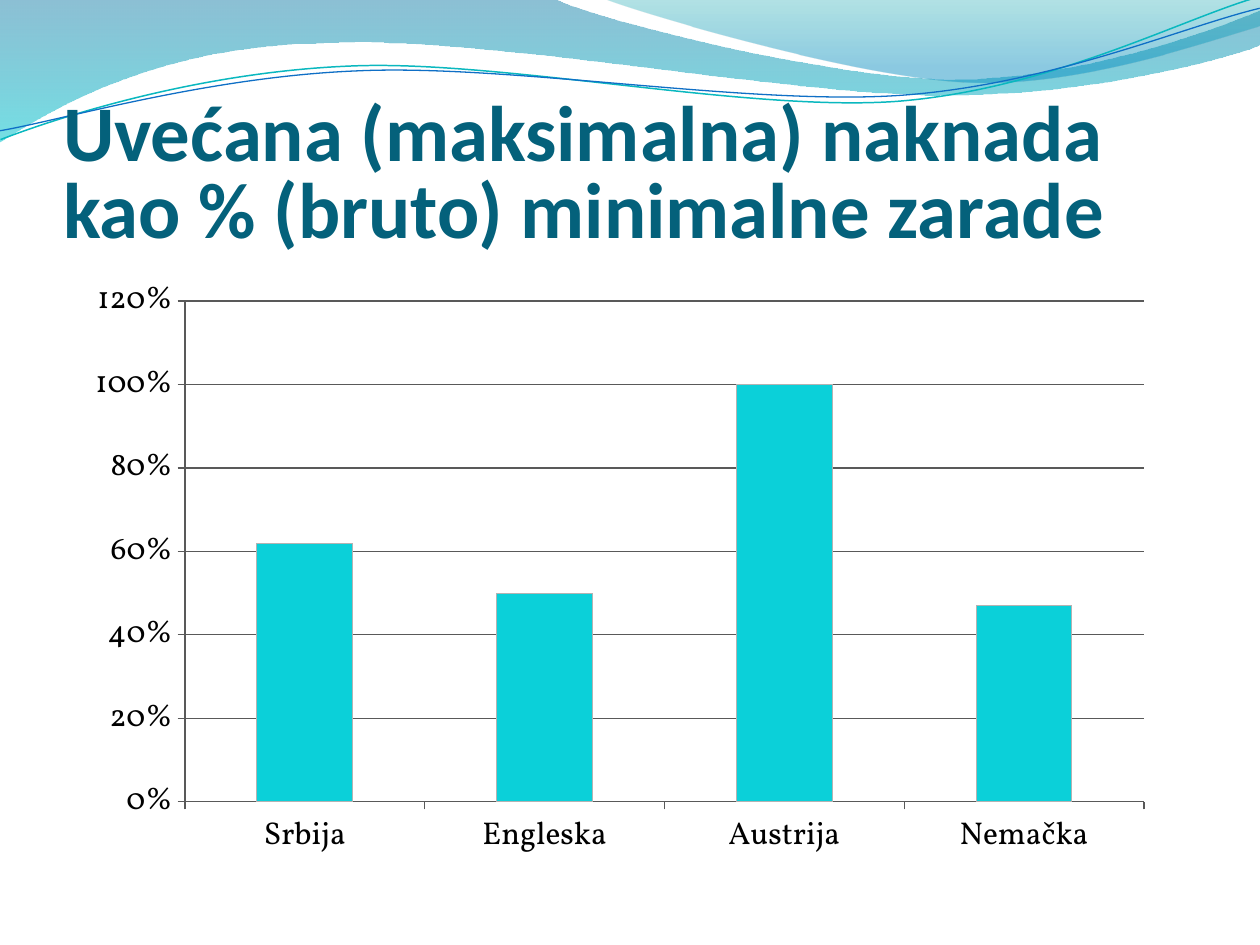
from lxml import etree
from pptx import Presentation
from pptx.chart.data import CategoryChartData
from pptx.dml.color import RGBColor
from pptx.enum.chart import XL_CHART_TYPE, XL_TICK_MARK
from pptx.enum.text import MSO_ANCHOR, MSO_AUTO_SIZE, PP_ALIGN
from pptx.oxml import parse_xml
from pptx.oxml.ns import nsdecls, qn
from pptx.util import Pt

PX = 914400 / 126
SLIDE = (1260, 945)

TITLE = "Uvećana (maksimalna) naknada kao % (bruto) minimalne zarade"
TITLE_BOX = (63, 97, 1134, 157)
SHARES = {"Srbija": 0.62, "Engleska": 0.5, "Austrija": 1, "Nemačka": 0.47}
CHART_BOX = (73, 267, 1092, 605)
PLOT_BOX = (185, 301, 959, 501)

THEME = {
    "title": {"name": "Calibri", "size": Pt(45), "bold": True, "color": "04617B"},
    "chart": {"name": "Vollkorn", "size": Pt(18), "bold": False, "color": "000000"},
    "bar": "0BD0D9",
    "bar_edge": "B3B3B3",
    "axis": "595959",
}

# A two-number step is a line; a six-number step is a Bézier curve.
# Gradient stops are position %, colour, opacity %.
BANDS = [
    ([(0, 0), (554, -1), (600, 21, 837, 79, 955, 79), (1075, 79, 1207, 33, 1260, 11),
      (1261, 45), (1238, 55, 1096, 96, 940, 95), (784, 95, 481, 35, 324, 43),
      (163, 45, 58, 105, -1, 142)],
     [(0, "0074A1", 45), (100, "00C6CF", 55)]),
    ([(604, -1), (641, 14, 859, 78, 969, 82), (1079, 87, 1211, 40, 1260, 26), (1260, 0)],
     [(0, "00A1A9", 30), (80, "008BBF", 45)]),
]
WAVE_TILT = -2.7
WAVES = [
    ([(-2, 110), (58, 90, 199, 52, 350, 53), (499, 53, 745, 118, 896, 114),
      (1049, 109, 1184, 45, 1260, 27)], "0AB8BF", 0.85),
    ([(-2, 101), (57, 94, 207, 57, 357, 58), (509, 58, 750, 112, 901, 108),
      (1052, 104, 1187, 52, 1262, 38)], "0F6FC6", 0.75),
]


def emu(*lengths):
    return [round(n * PX) for n in lengths]


def rgb(value):
    return RGBColor.from_string(value)


def set_font(font, style):
    for name, value in style.items():
        if name == "color":
            font.color.rgb = rgb(value)
        else:
            setattr(font, name, value)


def add_outline(shapes, steps, close):
    """Draw straight segments between the anchors, then bend the curved ones."""
    start, *rest = [emu(*step) for step in steps]
    builder = shapes.build_freeform(*start)
    builder.add_line_segments([step[-2:] for step in rest], close=close)
    s = builder.convert_to_shape()
    segments = s.element.findall(".//" + qn("a:lnTo"))
    for segment, step in zip(segments, rest):
        if len(step) == 6:
            curve = etree.Element(qn("a:cubicBezTo"))
            for x, y in zip(step[::2], step[1::2]):
                etree.SubElement(curve, qn("a:pt"), x=str(x - s.left), y=str(y - s.top))
            segment.getparent().replace(segment, curve)
    s.shadow.inherit = False
    s.fill.background()
    return s


def add_band(shapes, steps, stops):
    s = add_outline(shapes, steps, True)
    s.line.fill.background()
    stops_xml = "".join(
        f'<a:gs pos="{pos * 1000}"><a:srgbClr val="{color}">'
        f'<a:alpha val="{alpha * 1000}"/></a:srgbClr></a:gs>'
        for pos, color, alpha in stops)
    gradient = parse_xml(f'<a:gradFill {nsdecls("a")}><a:gsLst>{stops_xml}</a:gsLst>'
                         '<a:lin ang="5400000" scaled="0"/></a:gradFill>')
    sp_pr = s.element.spPr
    sp_pr.replace(sp_pr.find(qn("a:noFill")), gradient)


def add_wave(shapes, steps, color, width):
    s = add_outline(shapes, steps, False)
    s.rotation = WAVE_TILT
    s.line.color.rgb = rgb(color)
    s.line.width = Pt(width)


def place_plot(chart):
    """Fix the inner plot area inside the chart frame."""
    area = chart.element.find(".//" + qn("c:plotArea"))
    for old in area.findall(qn("c:layout")):
        area.remove(old)
    layout = etree.Element(qn("c:layout"))
    manual = etree.SubElement(layout, qn("c:manualLayout"))
    left, top, width, height = CHART_BOX
    x, y, w, h = PLOT_BOX
    values = {"layoutTarget": "inner", "xMode": "edge", "yMode": "edge",
              "x": (x - left) / width, "y": (y - top) / height,
              "w": w / width, "h": h / height}
    for tag, value in values.items():
        etree.SubElement(manual, qn("c:" + tag)).set("val", str(value))
    area.insert(0, layout)


def add_share_chart(slide):
    data = CategoryChartData(number_format="0%")
    data.categories = list(SHARES)
    data.add_series("Series 1", list(SHARES.values()))
    chart = slide.shapes.add_chart(XL_CHART_TYPE.COLUMN_CLUSTERED, *emu(*CHART_BOX), data).chart
    chart.has_legend = chart.has_title = False
    set_font(chart.font, THEME["chart"])

    plot = chart.plots[0]
    plot.gap_width = 150
    plot.vary_by_categories = False
    bars = plot.series[0].format
    bars.fill.solid()
    bars.fill.fore_color.rgb = rgb(THEME["bar"])
    bars.line.color.rgb = rgb(THEME["bar_edge"])

    values = chart.value_axis
    values.minimum_scale, values.maximum_scale, values.major_unit = 0, 1.2, 0.2
    values.has_major_gridlines = True
    values.tick_labels.number_format = "0%"
    values.tick_labels.number_format_is_linked = False
    for axis in (values, chart.category_axis):
        axis.major_tick_mark = XL_TICK_MARK.OUTSIDE
        axis.minor_tick_mark = XL_TICK_MARK.NONE
    for part in (values, chart.category_axis, values.major_gridlines):
        part.format.line.color.rgb = rgb(THEME["axis"])
        part.format.line.width = Pt(0.75)
    place_plot(chart)


def set_title(slide):
    title = slide.shapes.title
    title.left, title.top, title.width, title.height = emu(*TITLE_BOX)
    tf = title.text_frame
    frame = {"word_wrap": True, "auto_size": MSO_AUTO_SIZE.NONE,
             "vertical_anchor": MSO_ANCHOR.BOTTOM, "margin_left": 0, "margin_right": 0,
             "margin_top": Pt(3.6), "margin_bottom": 0}
    for name, value in frame.items():
        setattr(tf, name, value)
    p = tf.paragraphs[0]
    p.alignment = PP_ALIGN.LEFT
    p.line_spacing = Pt(44)
    r = p.add_run()
    r.text = TITLE
    set_font(r.font, THEME["title"])
    slide.shapes.element.append(title.element)  # in front of the waves


def main():
    prs = Presentation()
    prs.slide_width, prs.slide_height = emu(*SLIDE)
    slide = prs.slides.add_slide(prs.slide_layouts[5])
    for steps, stops in BANDS:
        add_band(slide.shapes, steps, stops)
    waves = slide.shapes.add_group_shape()
    for wave in WAVES:
        add_wave(waves.shapes, *wave)
    set_title(slide)
    add_share_chart(slide)
    prs.save("out.pptx")


if __name__ == "__main__":
    main()
